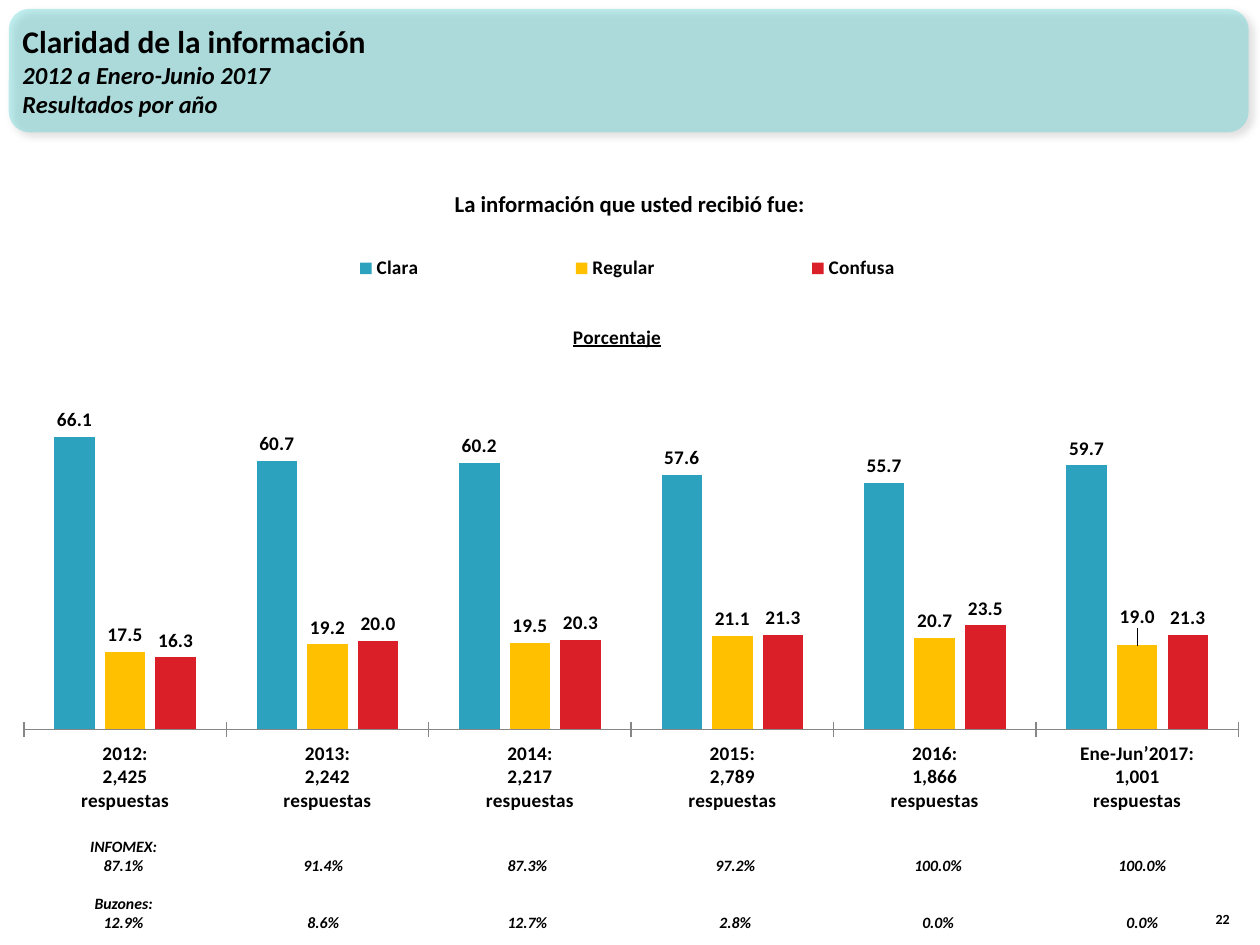
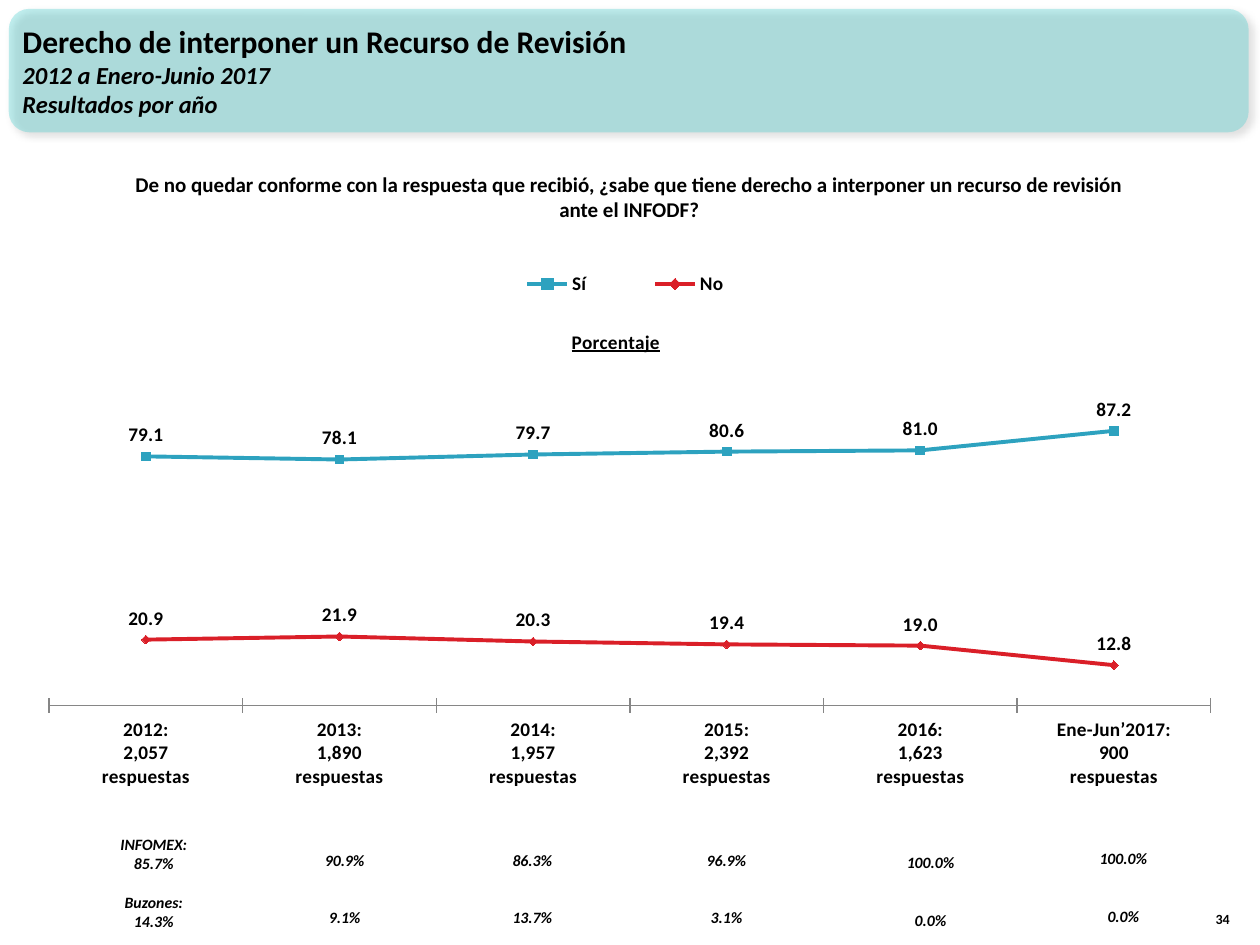
"""Build two survey result slides that share a header band, a chart style and source shares."""
import dataclasses
import typing

import lxml.etree
import pptx
import pptx.chart.chart
import pptx.chart.data
import pptx.dml.color
import pptx.enum.chart
import pptx.enum.shapes
import pptx.enum.text
import pptx.oxml.ns
import pptx.slide
import pptx.util

COLUMNS, ROWS = 100, 75
SLIDE_WIDTH, SLIDE_HEIGHT = pptx.util.Inches(10), pptx.util.Inches(7.5)
ALIGN = pptx.enum.text.PP_ALIGN
ANCHOR = pptx.enum.text.MSO_ANCHOR
CHART_TYPE = pptx.enum.chart.XL_CHART_TYPE
LABEL_POSITION = pptx.enum.chart.XL_LABEL_POSITION
MARKER = pptx.enum.chart.XL_MARKER_STYLE


@dataclasses.dataclass(frozen=True)
class Theme:
    """Font, colours and type sizes."""
    font: str = "Calibri"
    text: str = "000000"
    band: str = "33CCCC"
    axis: str = "868686"
    blue: str = "2DA2BF"
    yellow: str = "FFC000"
    red: str = "DA1F28"
    title: int = 18
    subtitle: int = 14
    chart: int = 11
    share: int = 9
    number: int = 8


THEME = Theme()


class Box(typing.NamedTuple):
    """A rectangle measured in grid columns and rows."""
    left: float
    top: float
    width: float
    height: float

    def lengths(self) -> tuple[int, ...]:
        """Return left, top, width and height as slide lengths."""
        column, row = SLIDE_WIDTH / COLUMNS, SLIDE_HEIGHT / ROWS
        return tuple(round(cells * unit) for cells, unit in zip(self, (column, row, column, row)))


class Line(typing.NamedTuple):
    """One paragraph of bold text."""
    text: str
    size: int
    italic: bool = False
    space_before: int = 0


class Series(typing.NamedTuple):
    """One chart series with its colour and marker."""
    name: str
    color: str
    values: tuple[float, ...]
    marker: typing.Any = None


class Share(typing.NamedTuple):
    """Percentages by request channel and the place of their text."""
    left: float
    top: float
    infomex: str
    buzones: str


@dataclasses.dataclass(frozen=True)
class Survey:
    """Everything that differs from one survey slide to the next."""
    title: str
    number: str
    question: Line
    question_box: Box
    kind: typing.Any
    chart_box: Box
    plot_box: Box
    legend_box: Box
    chart_title_at: tuple[float, float]
    maximum: int
    answers: tuple[str, ...]
    series: tuple[Series, ...]
    shares: tuple[Share, ...]
    raised_label: tuple[int, int] | None = None


BAND = Box(0.7, 0.7, 98.4, 9.8)
HEADING = Box(0.8, 0.9, 91.7, 9.4)
PAGE_NUMBER = Box(94.6, 70.1, 4, 4)
PERIODS = ("2012", "2013", "2014", "2015", "2016", "Ene-Jun’2017")

SURVEYS = (
    Survey(
        "Claridad de la información", "22",
        Line("La información que usted recibió fue:", 13), Box(8.9, 14.6, 82.1, 3.2),
        CHART_TYPE.COLUMN_CLUSTERED,
        Box(0.2, 18.6, 99.8, 48), Box(1.9, 29.8, 96.4, 28.1), Box(16.6, 18.9, 66.4, 4.8),
        (45.2, 25.4), 80,
        ("2,425", "2,242", "2,217", "2,789", "1,866", "1,001"),
        (
            Series("Clara", THEME.blue, (66.1, 60.7, 60.2, 57.6, 55.7, 59.7)),
            Series("Regular", THEME.yellow, (17.5, 19.2, 19.5, 21.1, 20.7, 19)),
            Series("Confusa", THEME.red, (16.3, 20, 20.3, 21.3, 23.5, 21.3)),
        ),
        (
            Share(5.9, 65.9, "INFOMEX: 87.1%", "Buzones: 12.9%"),
            Share(22.7, 67.4, "91.4%", "8.6%"),
            Share(38.9, 67.4, "87.3%", "12.7%"),
            Share(55.4, 67.4, "97.2%", "2.8%"),
            Share(71.5, 67.4, "100.0%", "0.0%"),
            Share(87.7, 67.4, "100.0%", "0.0%"),
        ),
        raised_label=(1, 5),
    ),
    Survey(
        "Derecho de interponer un Recurso de Revisión", "34",
        Line("De no quedar conforme con la respuesta que recibió, ¿sabe que tiene derecho "
             "a interponer un recurso de revisión ante el INFODF?", 12),
        Box(8.9, 13.1, 82.1, 5),
        CHART_TYPE.LINE_MARKERS,
        Box(2.3, 20.2, 95.3, 45.7), Box(3.9, 31, 92.2, 25), Box(36.9, 20.3, 25.5, 4.5),
        (45.1, 25.8), 100,
        ("2,057", "1,890", "1,957", "2,392", "1,623", "900"),
        (
            Series("Sí", THEME.blue, (79.1, 78.1, 79.7, 80.6, 81, 87.2), MARKER.SQUARE),
            Series("No", THEME.red, (20.9, 21.9, 20.3, 19.4, 19, 12.8), MARKER.DIAMOND),
        ),
        (
            Share(8.3, 65.8, "INFOMEX: 85.7%", "Buzones: 14.3%"),
            Share(24.4, 67, "90.9%", "9.1%"),
            Share(39.3, 67, "86.3%", "13.7%"),
            Share(54.7, 67, "96.9%", "3.1%"),
            Share(70.9, 67.2, "100.0%", "0.0%"),
            Share(86.2, 66.9, "100.0%", "0.0%"),
        ),
    ),
)


def rgb(color: str) -> pptx.dml.color.RGBColor:
    """Turn a hexadecimal colour into a colour object."""
    return pptx.dml.color.RGBColor.from_string(color)


def add_element(parent: typing.Any, tag: str, **attributes: typing.Any) -> typing.Any:
    """Append a namespaced XML element and return it."""
    values = {name: str(value) for name, value in attributes.items()}
    return lxml.etree.SubElement(parent, pptx.oxml.ns.qn(tag), values)


def style_font(font: typing.Any, size: int) -> None:
    """Apply the bold theme font."""
    font.name, font.bold, font.size = THEME.font, True, pptx.util.Pt(size)
    font.color.rgb = rgb(THEME.text)


def add_text(slide: pptx.slide.Slide, box: Box, lines: typing.Iterable[Line], align: typing.Any,
             anchor: typing.Any = ANCHOR.TOP, wrap: bool = True) -> None:
    """Add a text box with one paragraph per line."""
    frame = slide.shapes.add_textbox(*box.lengths()).text_frame
    frame.word_wrap, frame.vertical_anchor = wrap, anchor
    for index, line in enumerate(lines):
        paragraph = frame.add_paragraph() if index else frame.paragraphs[0]
        paragraph.alignment = align
        paragraph.space_before = pptx.util.Pt(line.space_before)
        run = paragraph.add_run()
        run.text = line.text
        style_font(run.font, line.size)
        run.font.italic = line.italic


def add_header(slide: pptx.slide.Slide, title: str, number: str) -> None:
    """Add the translucent band, its heading and the page number."""
    band = slide.shapes.add_shape(
        pptx.enum.shapes.MSO_SHAPE.ROUNDED_RECTANGLE, *BAND.lengths())
    band.fill.solid()
    band.fill.fore_color.rgb = rgb(THEME.band)
    band.line.fill.background()
    band.shadow.inherit = False
    properties = band.element.spPr
    add_element(properties.find(".//" + pptx.oxml.ns.qn("a:srgbClr")), "a:alpha", val=30000)
    shadow = add_element(
        properties.find(pptx.oxml.ns.qn("a:effectLst")), "a:outerShdw",
        blurRad=pptx.util.Pt(4), dist=pptx.util.Pt(3), dir=45 * 60000,
        algn="tl", rotWithShape=0)
    add_element(add_element(shadow, "a:srgbClr", val=THEME.text), "a:alpha", val=40000)
    add_text(slide, HEADING, (
        Line(title, THEME.title),
        Line("2012 a Enero-Junio 2017", THEME.subtitle, True),
        Line("Resultados por año", THEME.subtitle, True),
    ), ALIGN.LEFT, ANCHOR.MIDDLE)
    add_text(slide, PAGE_NUMBER, (Line(number, THEME.number),), ALIGN.RIGHT, ANCHOR.BOTTOM)


def add_layout(parent: typing.Any, **settings: typing.Any) -> typing.Any:
    """Append a manual chart layout with the given settings."""
    layout = add_element(parent, "c:layout")
    manual = add_element(layout, "c:manualLayout")
    for name, value in settings.items():
        add_element(manual, "c:" + name, val=value)
    return layout


def place_part(chart: pptx.chart.chart.Chart, tag: str, frame: Box, left: float, top: float,
               size: tuple[float, float] | None = None) -> None:
    """Fix a chart part at a place on the slide grid."""
    part = chart.element.find(".//" + pptx.oxml.ns.qn(tag))
    for former in part.findall(pptx.oxml.ns.qn("c:layout")):
        part.remove(former)
    settings = {"layoutTarget": "inner"} if tag == "c:plotArea" else {}
    settings |= {"xMode": "edge", "yMode": "edge",
                 "x": (left - frame.left) / frame.width, "y": (top - frame.top) / frame.height}
    if size:
        settings |= {"w": size[0] / frame.width, "h": size[1] / frame.height}
    layout = add_layout(part, **settings)
    overlay = part.find(pptx.oxml.ns.qn("c:overlay"))
    if overlay is None:
        part.insert(0, layout)
    else:
        overlay.addprevious(layout)


def style_axes(chart: pptx.chart.chart.Chart, maximum: int) -> None:
    """Show a ticked category axis and hide the value axis."""
    category_axis, value_axis = chart.category_axis, chart.value_axis
    category_axis.major_tick_mark = pptx.enum.chart.XL_TICK_MARK.CROSS
    category_axis.format.line.color.rgb = rgb(THEME.axis)
    category_axis.has_major_gridlines = value_axis.has_major_gridlines = False
    value_axis.minimum_scale, value_axis.maximum_scale = 0, maximum
    value_axis.major_unit = 20
    value_axis.visible = False


def style_series(series: typing.Any, design: Series) -> None:
    """Colour one series and label its values."""
    fills = [series.format.fill]
    if design.marker is not None:
        series.smooth = False
        series.format.line.width = pptx.util.Pt(2.25)
        series.format.line.color.rgb = rgb(design.color)
        series.marker.style, series.marker.size = design.marker, 5
        series.marker.format.line.color.rgb = rgb(design.color)
        fills = [series.marker.format.fill]
    for fill in fills:
        fill.solid()
        fill.fore_color.rgb = rgb(design.color)
    labels = series.data_labels
    labels.show_value = True
    labels.number_format, labels.number_format_is_linked = "0.0", False
    labels.position = LABEL_POSITION.OUTSIDE_END if design.marker is None else LABEL_POSITION.ABOVE
    style_font(labels.font, THEME.chart)


def add_survey_chart(slide: pptx.slide.Slide, survey: Survey) -> None:
    """Add the chart of answers by period."""
    data = pptx.chart.data.CategoryChartData(number_format="0.0")
    data.categories = [f"{period}:\n{count}\nrespuestas"
                       for period, count in zip(PERIODS, survey.answers)]
    for design in survey.series:
        data.add_series(design.name, design.values)
    frame = survey.chart_box
    chart = slide.shapes.add_chart(survey.kind, *frame.lengths(), data).chart
    style_font(chart.font, THEME.chart)
    style_axes(chart, survey.maximum)
    plot = chart.plots[0]
    plot.vary_by_categories = False
    if survey.kind == CHART_TYPE.COLUMN_CLUSTERED:
        plot.gap_width, plot.overlap = 150, -25
    for series, design in zip(plot.series, survey.series):
        style_series(series, design)
    if survey.raised_label:
        row, point = survey.raised_label
        label = plot.series[row].points[point].data_label
        label.position = LABEL_POSITION.OUTSIDE_END
        index = chart.element.find(".//" + pptx.oxml.ns.qn("c:dLbl"))[0]
        index.addnext(add_layout(index.getparent(), x=0, y=-0.02))
    chart.has_title = chart.has_legend = True
    run = chart.chart_title.text_frame.paragraphs[0].add_run()
    run.text = "Porcentaje"
    style_font(run.font, THEME.chart)
    run.font.underline = True
    chart.legend.position = pptx.enum.chart.XL_LEGEND_POSITION.TOP
    chart.legend.include_in_layout = False
    style_font(chart.legend.font, THEME.chart)
    place_part(chart, "c:title", frame, *survey.chart_title_at)
    for tag, box in (("c:legend", survey.legend_box), ("c:plotArea", survey.plot_box)):
        place_part(chart, tag, frame, box.left, box.top, (box.width, box.height))


def add_shares(slide: pptx.slide.Slide, shares: tuple[Share, ...]) -> None:
    """Add the request channel percentages under each period."""
    for index, share in enumerate(shares):
        width, height, gap = (5.9, 7.1, 22) if index else (7.8, 8.6, 11)
        add_text(slide, Box(share.left, share.top, width, height), (
            Line(share.infomex, THEME.share, True),
            Line(share.buzones, THEME.share, True, gap),
        ), ALIGN.CENTER, wrap=index == 0)


def main() -> None:
    """Build and save the presentation."""
    presentation = pptx.Presentation()
    presentation.slide_width, presentation.slide_height = SLIDE_WIDTH, SLIDE_HEIGHT
    for survey in SURVEYS:
        slide = presentation.slides.add_slide(presentation.slide_layouts[6])
        add_header(slide, survey.title, survey.number)
        add_text(slide, survey.question_box, (survey.question,), ALIGN.CENTER)
        add_survey_chart(slide, survey)
        add_shares(slide, survey.shares)
    presentation.save("out.pptx")


if __name__ == "__main__":
    main()
